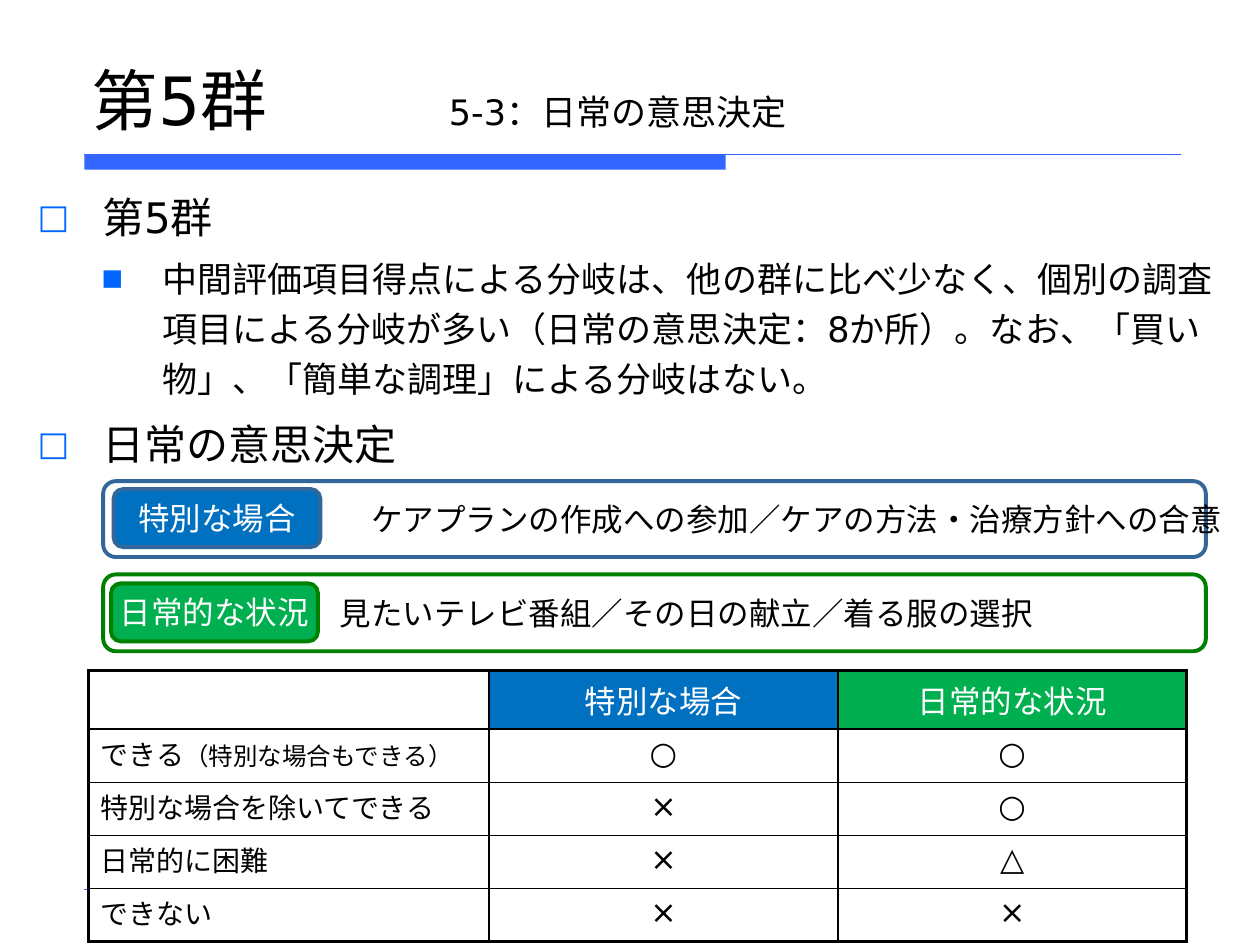
from dataclasses import dataclass

from lxml import etree
from pptx import Presentation
from pptx.dml.color import RGBColor
from pptx.enum.shapes import MSO_CONNECTOR, MSO_SHAPE
from pptx.enum.text import MSO_ANCHOR, PP_ALIGN
from pptx.oxml.ns import qn
from pptx.util import Cm, Pt

LINE = MSO_CONNECTOR.STRAIGHT
RECTANGLE, ROUNDED = MSO_SHAPE.RECTANGLE, MSO_SHAPE.ROUNDED_RECTANGLE
TOP, MIDDLE, BOTTOM = MSO_ANCHOR.TOP, MSO_ANCHOR.MIDDLE, MSO_ANCHOR.BOTTOM
LEFT, CENTER = PP_ALIGN.LEFT, PP_ALIGN.CENTER
SANS, CJK = "DejaVu Sans", "Noto Sans CJK JP"
BLACK, WHITE, RULE_BLUE, BULLET_BLUE = "000000", "FFFFFF", "3366FF", "0066FF"
BLUE, GREEN, BLUE_EDGE, GREEN_EDGE = "0070C0", "00B050", "336699", "008000"


@dataclass
class Bullet:
    text: str
    size: int
    mark: str
    scale: int
    margin: float
    hanging: float


@dataclass
class Panel:
    text: str
    left: float
    top: float
    width: float
    height: float
    fill: str
    edge: str
    color: str
    inset: float = 0


BULLETS = [
    Bullet("第5群", 24, "□", 80, 1.3, 1.3),
    Bullet("中間評価項目得点による分岐は、他の群に比べ少なく、個別の調査項目による分岐が多い"
           "（日常の意思決定：8か所）。なお、「買い物」、「簡単な調理」による分岐はない。",
           20, "■", 65, 2.51, 1.22),
    Bullet("日常の意思決定", 24, "□", 80, 1.3, 1.3),
]
PANELS = [
    Panel("ケアプランの作成への参加／ケアの方法・治療方針への合意",
          2.08, 9.7, 22.23, 1.53, WHITE, BLUE_EDGE, BLACK, 5.72),
    Panel("見たいテレビ番組／その日の献立／着る服の選択",
          2.08, 11.58, 22.23, 1.55, WHITE, GREEN_EDGE, BLACK, 1.27),
    Panel("日常的な状況", 2.24, 11.76, 4.17, 1.17, GREEN, GREEN_EDGE, WHITE),
    Panel("特別な場合", 2.29, 9.86, 4.17, 1.17, BLUE, BLUE_EDGE, WHITE),
]
HEADINGS = [("", WHITE), ("特別な場合", BLUE), ("日常的な状況", GREEN)]
ANSWERS = [
    (("できる", "（特別な場合もできる）"), "○", "○"),
    (("特別な場合を除いてできる",), "×", "○"),
    (("日常的に困難",), "×", "△"),
    (("できない",), "×", "×"),
]
COLUMN_WIDTHS = [8.08, 7.03, 7.03]
ROW_HEIGHTS = [1.18] + [1.07] * len(ANSWERS)


def rgb(color: str) -> RGBColor:
    """Turn a hex string into a colour."""
    return RGBColor.from_string(color)


def format_span(span, size: int, color: str = BLACK, font: str = SANS) -> None:
    """Give a run its size, colour and typeface."""
    span.font.size = Pt(size)
    span.font.color.rgb = rgb(color)
    span.font.name = font
    etree.SubElement(span._r.get_or_add_rPr(), qn("a:ea"), typeface=font)


def add_text_box(page, left: float, top: float, width: float, height: float, anchor):
    """Add a wrapping text box and return its text frame."""
    frame = page.shapes.add_textbox(Cm(left), Cm(top), Cm(width), Cm(height)).text_frame
    frame.word_wrap = True
    frame.vertical_anchor = anchor
    return frame


def add_line(page, left: float, right: float, top: float, weight: float) -> None:
    """Draw a horizontal blue rule."""
    line = page.shapes.add_connector(LINE, Cm(left), Cm(top), Cm(right), Cm(top))
    line.line.color.rgb = rgb(RULE_BLUE)
    line.line.width = Pt(weight)
    etree.SubElement(line._element.spPr, qn("a:effectLst"))


def add_rules(page) -> None:
    """Draw the bar below the title and the thin rules."""
    bar = page.shapes.add_shape(RECTANGLE, Cm(1.7), Cm(3.12), Cm(12.93), Cm(0.3))
    bar.shadow.inherit = False
    bar.fill.solid()
    bar.fill.fore_color.rgb = rgb(RULE_BLUE)
    bar.line.fill.background()
    add_line(page, 1.7, 23.8, 3.12, 0.75)
    add_line(page, 1.7, 23.7, 17.93, 0.25)


def add_title(page) -> None:
    """Write the title and its subtitle, parted by a tab stop."""
    para = add_text_box(page, 1.6, 0.84, 22.23, 2.08, BOTTOM).paragraphs[0]
    for text, size in (("第5群\t", 38), ("5-3：日常の意思決定", 20)):
        span = para.add_run()
        span.text = text
        format_span(span, size)
    tabs = etree.SubElement(para._p.get_or_add_pPr(), qn("a:tabLst"))
    etree.SubElement(tabs, qn("a:tab"), pos=str(Cm(7.2)), algn="l")


def add_bullets(page, bullets: list[Bullet]) -> None:
    """Write the bulleted outline."""
    frame = add_text_box(page, 0.51, 3.53, 24.41, 6.2, TOP)
    frame.text = "\n".join(bullet.text for bullet in bullets)
    for para, bullet in zip(frame.paragraphs, bullets):
        format_span(para.runs[0], bullet.size)
        para.line_spacing = 1.2
        para.space_before = Pt(bullet.size * 0.2)
        props = para._p.get_or_add_pPr()
        props.set("marL", str(Cm(bullet.margin)))
        props.set("indent", str(-Cm(bullet.hanging)))
        tint = etree.SubElement(props, qn("a:buClr"))
        etree.SubElement(tint, qn("a:srgbClr"), val=BULLET_BLUE)
        etree.SubElement(props, qn("a:buSzPct"), val=str(bullet.scale * 1000))
        etree.SubElement(props, qn("a:buFont"), typeface=SANS)
        etree.SubElement(props, qn("a:buChar"), char=bullet.mark)


def add_panel(page, panel: Panel) -> None:
    """Draw a rounded panel with one line of text."""
    box = page.shapes.add_shape(ROUNDED, Cm(panel.left), Cm(panel.top),
                                Cm(panel.width), Cm(panel.height))
    box.shadow.inherit = False
    box.fill.solid()
    box.fill.fore_color.rgb = rgb(panel.fill)
    box.line.color.rgb = rgb(panel.edge)
    box.line.width = Pt(2.25)
    frame = box.text_frame
    frame.text = panel.text
    frame.word_wrap = False
    frame.vertical_anchor = MIDDLE
    frame.margin_left, frame.margin_right = Cm(panel.inset), Cm(0)
    frame.paragraphs[0].alignment = CENTER
    format_span(frame.paragraphs[0].runs[0], 18, panel.color)


def style_cell(cell, fill: str, outer: dict[str, bool]) -> None:
    """Set borders, thick on outer sides, and then the fill."""
    props = cell._tc.get_or_add_tcPr()
    for side, is_outer in outer.items():
        weight = Pt(2.25 if is_outer else 1)
        border = etree.SubElement(props, qn(f"a:ln{side}"), w=str(weight))
        paint = etree.SubElement(border, qn("a:solidFill"))
        etree.SubElement(paint, qn("a:srgbClr"), val=BLACK)
    cell.fill.solid()
    cell.fill.fore_color.rgb = rgb(fill)


def fill_cell(cell, texts: tuple[str, ...], sizes: tuple[int, ...], align,
              color: str = BLACK, font: str = SANS) -> None:
    """Write the runs of one cell."""
    para = cell.text_frame.paragraphs[0]
    para.alignment = align
    for text, size in zip(texts, sizes):
        span = para.add_run()
        span.text = text
        format_span(span, size, color, font)


def add_answer_table(page) -> None:
    """Build the table of answers by situation."""
    rows, columns = len(ROW_HEIGHTS), len(COLUMN_WIDTHS)
    table = page.shapes.add_table(rows, columns, Cm(1.78), Cm(13.52),
                                  Cm(sum(COLUMN_WIDTHS)), Cm(sum(ROW_HEIGHTS))).table
    for column, width in zip(table.columns, COLUMN_WIDTHS):
        column.width = Cm(width)
    for row, height in zip(table.rows, ROW_HEIGHTS):
        row.height = Cm(height)
    for r in range(rows):
        for c in range(columns):
            fill = HEADINGS[c][1] if r == 0 else WHITE
            style_cell(table.cell(r, c), fill, {"L": c == 0, "R": c == columns - 1,
                                                "T": r == 0, "B": r == rows - 1})
    for c, (heading, _) in enumerate(HEADINGS):
        if heading:
            fill_cell(table.cell(0, c), (heading,), (18,), CENTER, WHITE, CJK)
    for r, (label, *marks) in enumerate(ANSWERS, 1):
        table.cell(r, 0).vertical_anchor = MIDDLE
        fill_cell(table.cell(r, 0), label, (16, 14), LEFT)
        for c, mark in enumerate(marks, 1):
            fill_cell(table.cell(r, c), (mark,), (18,), CENTER)


def main() -> None:
    """Build and save the slide."""
    deck = Presentation()
    deck.slide_width, deck.slide_height = Cm(25.4), Cm(19.05)
    page = deck.slides.add_slide(deck.slide_layouts[6])
    add_rules(page)
    add_title(page)
    add_bullets(page, BULLETS)
    add_answer_table(page)
    for panel in PANELS:
        add_panel(page, panel)
    deck.save("out.pptx")


if __name__ == "__main__":
    main()
